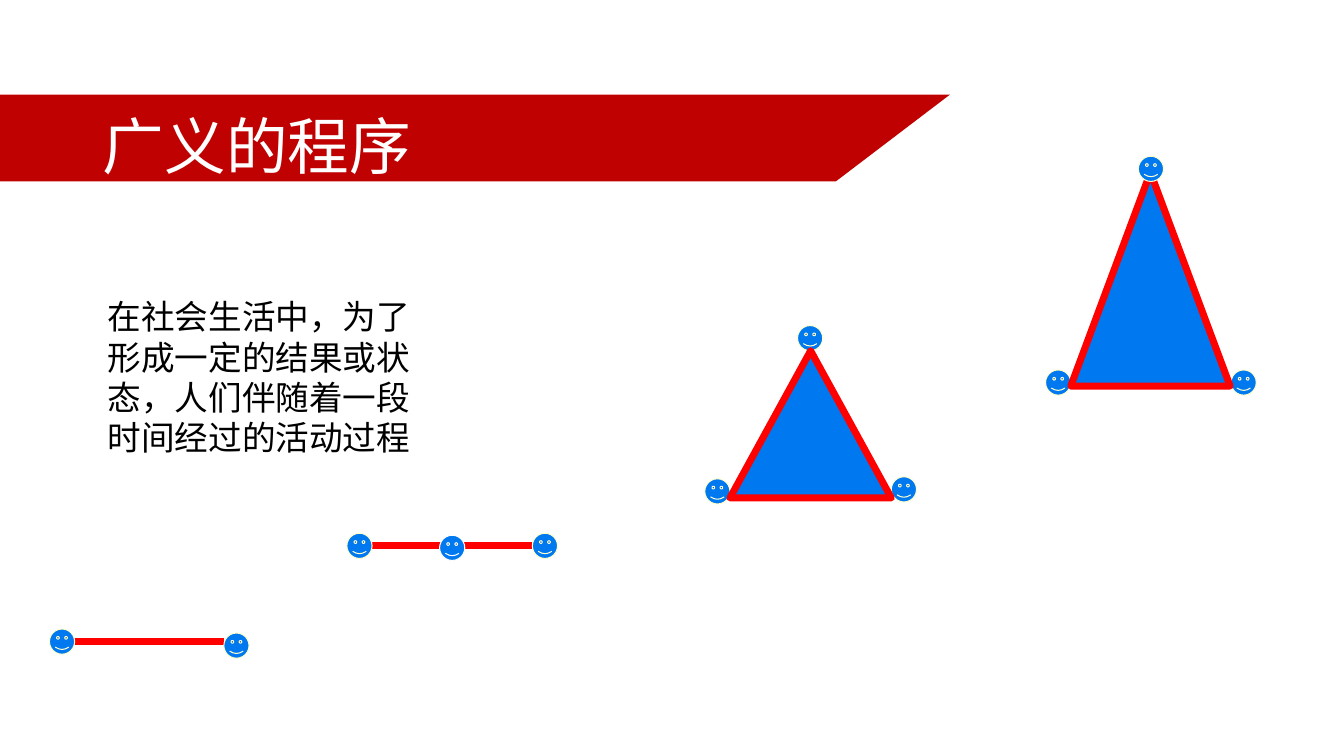
from pptx import Presentation
from pptx.dml.color import RGBColor
from pptx.enum import shapes, text
from pptx.oxml import ns, xmlchemy
from pptx.util import Emu, Pt

RED, BLUE, CREAM, WHITE = "FF0000", "0078F0", "FFFFCC", "FFFFFF"
CJK = "Noto Sans CJK JP"
FACE = 25


def px(n):
    """Turn px, 100 to the inch, into EMU."""
    return Emu(n * 9144)


def rgb(hex_code):
    return RGBColor.from_string(hex_code)


def write(tf, content, *, size, color, font, anchor, spacing=None,
          auto_size=text.MSO_AUTO_SIZE.NONE):
    tf.word_wrap = True
    tf.auto_size = auto_size
    tf.vertical_anchor = anchor
    p = tf.paragraphs[0]
    p.alignment = text.PP_ALIGN.LEFT
    p.line_spacing = spacing
    r = p.add_run()
    r.text = content
    r.font.size = Pt(size)
    r.font.color.rgb = rgb(color)
    r.font.name = font
    ea = xmlchemy.OxmlElement("a:ea")
    ea.set("typeface", CJK)
    r._r.get_or_add_rPr().append(ea)


class Board:
    def __init__(self, prs):
        self.slide = prs.slides.add_slide(prs.slide_layouts[5])
        self.shapes = self.slide.shapes

    def banner(self, points, color):
        """Draw a filled outline behind everything else."""
        builder = self.shapes.build_freeform(*points[0], scale=px(1))
        builder.add_line_segments(points[1:], close=True)
        sp = builder.convert_to_shape()
        sp.shadow.inherit = False
        sp.fill.solid()
        sp.fill.fore_color.rgb = rgb(color)
        sp.line.fill.background()
        self.shapes._spTree.insert(2, sp._element)

    def title(self, content, x, y, w, h):
        sp = self.shapes.title
        sp.left, sp.top, sp.width, sp.height = map(px, (x, y, w, h))
        write(sp.text_frame, content, size=44, color=WHITE, font="Arial",
              anchor=text.MSO_ANCHOR.BOTTOM, spacing=1.2)

    def note(self, content, x, y, w, h):
        sp = self.shapes.add_textbox(*map(px, (x, y, w, h)))
        write(sp.text_frame, content, size=24, color="000000", font=CJK,
              anchor=text.MSO_ANCHOR.TOP,
              auto_size=text.MSO_AUTO_SIZE.SHAPE_TO_FIT_TEXT)

    def preset(self, kind, x, y, w, h, line, width):
        sp = self.shapes.add_shape(kind, *map(px, (x, y, w, h)))
        sp.shadow.inherit = False
        sp.fill.solid()
        sp.fill.fore_color.rgb = rgb(BLUE)
        sp.line.color.rgb = rgb(line)
        sp.line.width = Pt(width)
        return sp

    def face(self, x, y, line=CREAM):
        self.preset(shapes.MSO_SHAPE.SMILEY_FACE, x, y, FACE, FACE, line, 0.75)

    def triangle(self, x, y, w, h):
        sp = self.preset(shapes.MSO_SHAPE.ISOSCELES_TRIANGLE, x, y, w, h, RED, 5)
        sp.line._get_or_add_ln().append(xmlchemy.OxmlElement("a:round"))

    def rope(self, x1, x2, y):
        cxn = self.shapes.add_connector(
            shapes.MSO_CONNECTOR.STRAIGHT, *map(px, (x1, y, x2, y)))
        cxn.line.color.rgb = rgb(RED)
        cxn.line.width = Pt(5)
        cxn._element.find(ns.qn("p:spPr")).append(
            xmlchemy.OxmlElement("a:effectLst"))


def main():
    prs = Presentation()
    prs.slide_width, prs.slide_height = px(1333), px(750)
    board = Board(prs)

    board.banner([(0, 94), (942, 94), (829, 180), (0, 180)], "C00102")
    board.title("广义的程序", 92, 40, 1150, 145)
    board.note("在社会生活中，为了形成一定的结果或状态，人们伴随着一段时间经过的活动过程",
               97, 289, 340, 172)

    # Two people stretch a rope
    board.rope(64, 222, 636)
    for x, y in [(49, 624), (222, 628)]:
        board.face(x, y)

    # A third person takes hold in the middle
    board.rope(369, 528, 541)
    for x in (344, 528):
        board.face(x, 529)
    board.face(436, 531, WHITE)

    # The three pull the rope into triangles
    for x, y in [(884, 473), (791, 323), (699, 475)]:
        board.face(x, y)
    board.triangle(724, 348, 160, 146)

    for x in (1221, 1037):
        board.face(x, 367)
    board.triangle(1062, 171, 158, 212)
    board.face(1129, 155)

    prs.save("out.pptx")


if __name__ == "__main__":
    main()
